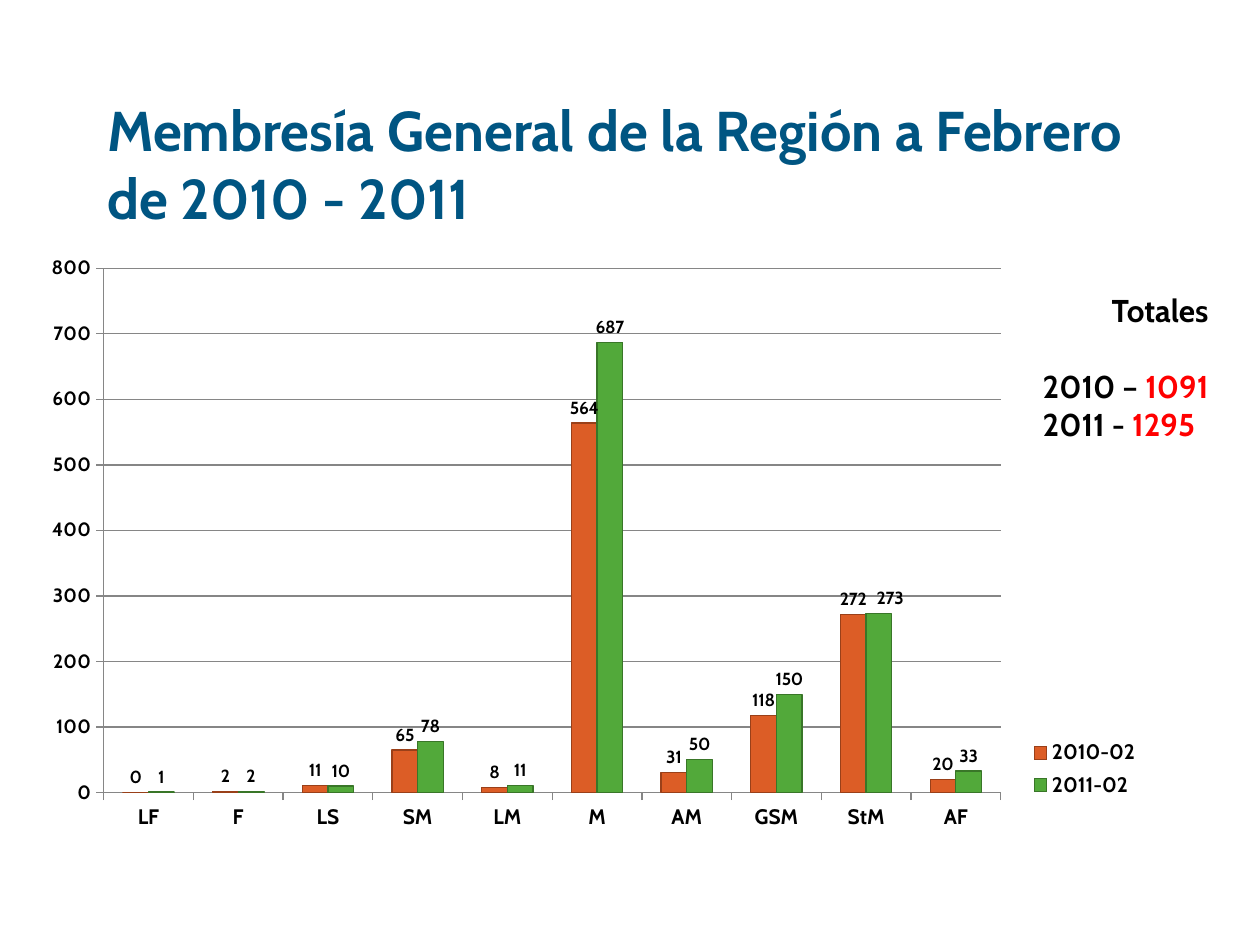
from dataclasses import dataclass
from lxml.etree import SubElement
from pptx import Presentation
from pptx.chart.data import CategoryChartData
from pptx.dml.color import RGBColor
from pptx.enum.chart import XL_CHART_TYPE, XL_LABEL_POSITION, XL_LEGEND_POSITION, XL_TICK_MARK
from pptx.enum.text import MSO_ANCHOR, MSO_AUTO_SIZE, PP_ALIGN
from pptx.oxml.ns import qn
from pptx.util import Inches, Pt


@dataclass(frozen=True)
class Theme:
    face: str = "Cabin"
    title: str = "005582"
    ink: str = "000000"
    mark: str = "FF0000"
    grid: str = "868686"
    big: int = 32
    body: int = 18
    axis: int = 12
    scale: int = 11
    label: int = 10


THEME = Theme()
CODES = ["LF", "F", "LS", "SM", "LM", "M", "AM", "GSM", "StM", "AF"]
YEARS = [
    ("2010-02", [0, 2, 11, 65, 8, 564, 31, 118, 272, 20], "DC5D26", "9A4019"),
    ("2011-02", [1, 2, 10, 78, 11, 687, 50, 150, 273, 33], "52A93A", "397628"),
]
TOTALS = [("2010 – ", "1091"), ("2011 - ", "1295")]


def apply(target, values):
    for name, value in values.items():
        setattr(target, name, value)


def style(font, size, color=THEME.ink):
    apply(font, {"name": THEME.face, "size": Pt(size), "bold": True})
    font.color.rgb = RGBColor.from_string(color)


def place(box):
    return [Inches(n) for n in box]


def add_run(para, text, size, color=THEME.ink):
    run = para.add_run()
    run.text = text
    style(run.font, size, color)


def add_title(slide, text, box):
    title = slide.shapes.title
    apply(title, dict(zip(("left", "top", "width", "height"), place(box))))
    apply(title.text_frame, {"vertical_anchor": MSO_ANCHOR.MIDDLE, "word_wrap": True,
                             "auto_size": MSO_AUTO_SIZE.NONE})
    para = title.text_frame.paragraphs[0]
    para.alignment = PP_ALIGN.LEFT
    add_run(para, text, THEME.big, THEME.title)


def add_totals(slide, box):
    frame = slide.shapes.add_textbox(*place(box)).text_frame
    apply(frame, {"word_wrap": False, "auto_size": MSO_AUTO_SIZE.SHAPE_TO_FIT_TEXT})
    head = frame.paragraphs[0]
    head.alignment = PP_ALIGN.RIGHT
    add_run(head, "Totales", THEME.body)
    for row, (year, total) in enumerate(TOTALS):
        para = frame.add_paragraph()
        if row == 0:
            para.space_before = Pt(22)
        add_run(para, year, THEME.body)
        add_run(para, total, THEME.body, THEME.mark)


def fill_layout(layout, values):
    manual = SubElement(layout, qn("c:manualLayout"))
    for name, value in values.items():
        SubElement(manual, qn(f"c:{name}")).set("val", str(value))


def set_layout(parent, before, box, inner=False):
    for old in parent.findall(qn("c:layout")):
        parent.remove(old)
    layout = SubElement(parent, qn("c:layout"))
    parent.find(qn(before)).addprevious(layout)
    target = {"layoutTarget": "inner"} if inner else {}
    modes = {"xMode": "edge", "yMode": "edge"}
    fill_layout(layout, target | modes | dict(zip("xywh", box)))


def nudge_label(series, index, shift):
    label = series.points[index].data_label
    style(label.font, THEME.label)
    label.position = XL_LABEL_POSITION.OUTSIDE_END
    mark = series.data_labels._element.find(qn("c:dLbl"))
    layout = SubElement(mark, qn("c:layout"))
    mark.find(qn("c:idx")).addnext(layout)
    fill_layout(layout, {"x": shift, "y": 0})


def style_axis(axis, size):
    apply(axis, {"major_tick_mark": XL_TICK_MARK.OUTSIDE, "minor_tick_mark": XL_TICK_MARK.NONE})
    style(axis.tick_labels.font, size)
    draw_line(axis.format.line, THEME.grid)


def draw_line(line, color):
    line.color.rgb = RGBColor.from_string(color)
    line.width = Pt(0.75)


def style_series(series, fill, edge):
    series.invert_if_negative = False
    series.format.fill.solid()
    series.format.fill.fore_color.rgb = RGBColor.from_string(fill)
    draw_line(series.format.line, edge)
    labels = series.data_labels
    apply(labels, {"show_value": True, "position": XL_LABEL_POSITION.OUTSIDE_END})
    style(labels.font, THEME.label)


def add_columns(slide, box):
    data = CategoryChartData()
    data.categories = CODES
    for name, values, *_ in YEARS:
        data.add_series(name, values)
    chart = slide.shapes.add_chart(XL_CHART_TYPE.COLUMN_CLUSTERED, *place(box), data).chart
    apply(chart, {"has_title": False, "has_legend": True})
    style(chart.font, THEME.label)
    plot = chart.plots[0]
    apply(plot, {"gap_width": 150, "overlap": 0, "vary_by_categories": False})
    for series, (_, _, fill, edge) in zip(plot.series, YEARS):
        style_series(series, fill, edge)
    nudge_label(plot.series[1], CODES.index("StM"), 0.01)
    style_axis(chart.category_axis, THEME.axis)
    scale = chart.value_axis
    style_axis(scale, THEME.scale)
    apply(scale, {"minimum_scale": 0, "maximum_scale": 800, "major_unit": 100})
    draw_line(scale.major_gridlines.format.line, THEME.grid)
    legend = chart.legend
    apply(legend, {"position": XL_LEGEND_POSITION.RIGHT, "include_in_layout": False})
    style(legend.font, THEME.axis)
    set_layout(legend._element, "c:overlay", (0.89, 0.82, 0.11, 0.12))
    area = chart._chartSpace.chart.plotArea
    set_layout(area, "c:barChart", (0.07, 0.04, 0.8, 0.88), inner=True)


def main():
    deck = Presentation()
    apply(deck, {"slide_width": Inches(10), "slide_height": Inches(7.5)})
    slide = deck.slides.add_slide(deck.slide_layouts[5])
    add_columns(slide, (0.2, 1.94, 8.9, 4.73))
    add_title(slide, "Membresía General de la Región a Febrero de 2010 - 2011", (0.75, 0.67, 8.5, 1.25))
    add_totals(slide, (8.07, 2.26, 1.62, 1.31))
    deck.save("out.pptx")


if __name__ == "__main__":
    main()
